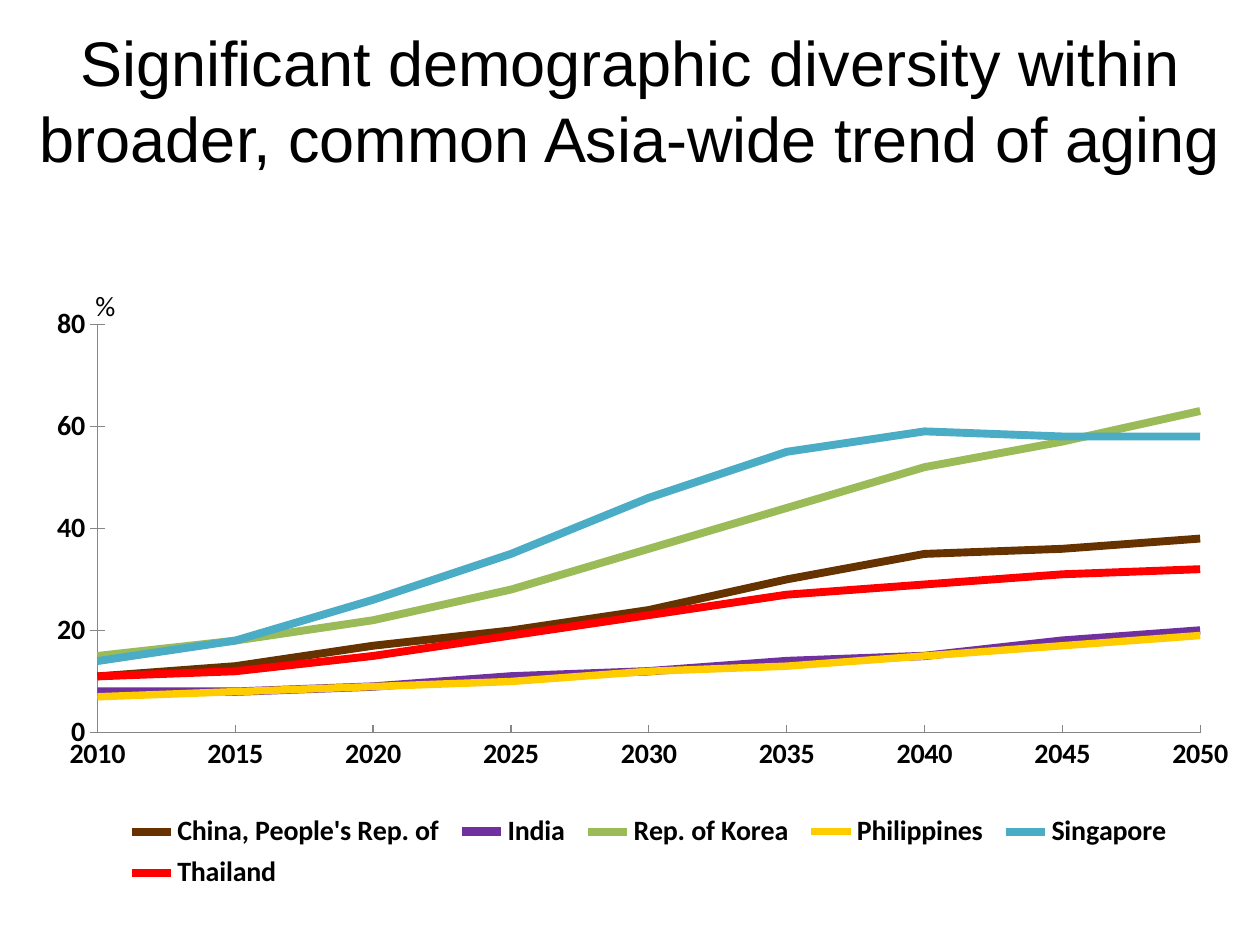
from dataclasses import dataclass

from pptx import Presentation
from pptx.chart.data import CategoryChartData
from pptx.dml.color import RGBColor
from pptx.enum.chart import XL_CHART_TYPE, XL_LEGEND_POSITION, XL_TICK_MARK
from pptx.enum.text import MSO_ANCHOR, PP_ALIGN
from pptx.oxml import parse_xml
from pptx.oxml.ns import nsdecls, qn
from pptx.util import Inches, Pt


@dataclass(frozen=True)
class Theme:
    text: str = "000000"
    axis: str = "868686"
    title_font: str = "Arial"
    chart_font: str = "Calibri"
    title_size: int = 36
    chart_size: int = 16


YEARS = [str(year) for year in range(2010, 2051, 5)]

# name, colour, line width, percentages by year
COUNTRIES = [
    ("China, People's Rep. of", "663300", 4.5, (11, 13, 17, 20, 24, 30, 35, 36, 38)),
    ("India", "7030A0", 4.75, (8, 8, 9, 11, 12, 14, 15, 18, 20)),
    ("Rep. of Korea", "9BBB59", 4.5, (15, 18, 22, 28, 36, 44, 52, 57, 63)),
    ("Philippines", "FFCC00", 4.25, (7, 8, 9, 10, 12, 13, 15, 17, 19)),
    ("Singapore", "4BACC6", 4.5, (14, 18, 26, 35, 46, 55, 59, 58, 58)),
    ("Thailand", "FF0000", 4.5, (11, 12, 15, 19, 23, 27, 29, 31, 32)),
]


def format_font(font, name, size, color, bold=False):
    font.name, font.size, font.bold = name, Pt(size), bold
    font.color.rgb = RGBColor.from_string(color)


def write_text(tf, text, align=PP_ALIGN.CENTER, **font_format):
    p = tf.paragraphs[0]
    p.alignment = align
    r = p.add_run()
    r.text = text
    format_font(r.font, **font_format)


def set_layout(element, index, inner=False, **fractions):
    """Place a chart part by fractions of the chart area."""
    for old in element.findall(qn("c:layout")):
        element.remove(old)
    target = '<c:layoutTarget val="inner"/>' if inner else ""
    modes = "".join(f'<c:{k}Mode val="edge"/>' for k in fractions if k in "xy")
    values = "".join(f'<c:{k} val="{v}"/>' for k, v in fractions.items())
    element.insert(index, parse_xml(
        f'<c:layout {nsdecls("c")}><c:manualLayout>{target}{modes}{values}'
        "</c:manualLayout></c:layout>"))


class SlideBuilder:
    def __init__(self, prs, theme):
        self.theme = theme
        self.s = prs.slides.add_slide(prs.slide_layouts[6])

    def title(self, text, left, top, width, height):
        box = self.s.shapes.add_textbox(
            Inches(left), Inches(top), Inches(width), Inches(height))
        tf = box.text_frame
        tf.word_wrap = True
        tf.vertical_anchor = MSO_ANCHOR.MIDDLE
        write_text(tf, text, name=self.theme.title_font,
                   size=self.theme.title_size, color=self.theme.text)

    def line_chart(self, categories, rows, unit, left, top, width, height):
        data = CategoryChartData()
        data.categories = categories
        for name, _, _, values in rows:
            data.add_series(name, values)
        chart = self.s.shapes.add_chart(
            XL_CHART_TYPE.LINE, Inches(left), Inches(top),
            Inches(width), Inches(height), data).chart
        chart.has_title = False
        style = dict(name=self.theme.chart_font, size=self.theme.chart_size,
                     color=self.theme.text)
        format_font(chart.font, **style)

        # Series lines
        plot = chart.plots[0]
        plot.vary_by_categories = False
        for series, (_, color, weight, _) in zip(plot.series, rows):
            series.smooth = False
            series.format.line.width = Pt(weight)
            series.format.line.color.rgb = RGBColor.from_string(color)
        set_layout(chart._chartSpace.chart.plotArea, 0, inner=True,
                   x=0.063, y=0.152, w=0.914, h=0.598)

        self.axes(chart, unit, style)

        # Legend
        chart.has_legend = True
        legend = chart.legend
        legend.position = XL_LEGEND_POSITION.BOTTOM
        legend.include_in_layout = False
        format_font(legend.font, bold=True, **style)
        set_layout(legend._element, 1, x=0.08, y=0.86, w=0.88, h=0.13)

    def axes(self, chart, unit, style):
        ticks = ((chart.category_axis, XL_TICK_MARK.INSIDE),
                 (chart.value_axis, XL_TICK_MARK.CROSS))
        for axis, tick in ticks:
            axis.has_major_gridlines = False
            axis.major_tick_mark = tick
            axis.minor_tick_mark = XL_TICK_MARK.NONE
            axis.format.line.width = Pt(0.75)
            axis.format.line.color.rgb = RGBColor.from_string(self.theme.axis)
            format_font(axis.tick_labels.font, bold=True, **style)

        value_axis = chart.value_axis
        value_axis.minimum_scale, value_axis.maximum_scale = 0, 80
        value_axis.major_unit = 20
        value_axis.tick_labels.number_format = "0"
        value_axis.tick_labels.number_format_is_linked = False

        # Lines start on the value axis
        element = value_axis._element
        between = element.find(qn("c:crossBetween"))
        if between is None:
            between = parse_xml(f'<c:crossBetween {nsdecls("c")}/>')
            element.find(qn("c:crosses")).addnext(between)
        between.set("val", "midCat")

        # Unit above the value axis
        tf = value_axis.axis_title.text_frame
        write_text(tf, unit, **style)
        tf._txBody.bodyPr.set("rot", "0")
        tf._txBody.bodyPr.set("vert", "horz")
        set_layout(value_axis.axis_title._element, 1, x=0.057, y=0.09)


def main():
    prs = Presentation()
    prs.slide_width, prs.slide_height = Inches(10), Inches(7.5)
    slide = SlideBuilder(prs, Theme())
    slide.title("Significant demographic diversity within broader, "
                "common Asia-wide trend of aging", 0, 0.25, 10, 1.08)
    slide.line_chart(YEARS, COUNTRIES, "%", 0.17, 1.75, 9.58, 5.42)
    prs.save("out.pptx")


if __name__ == "__main__":
    main()
